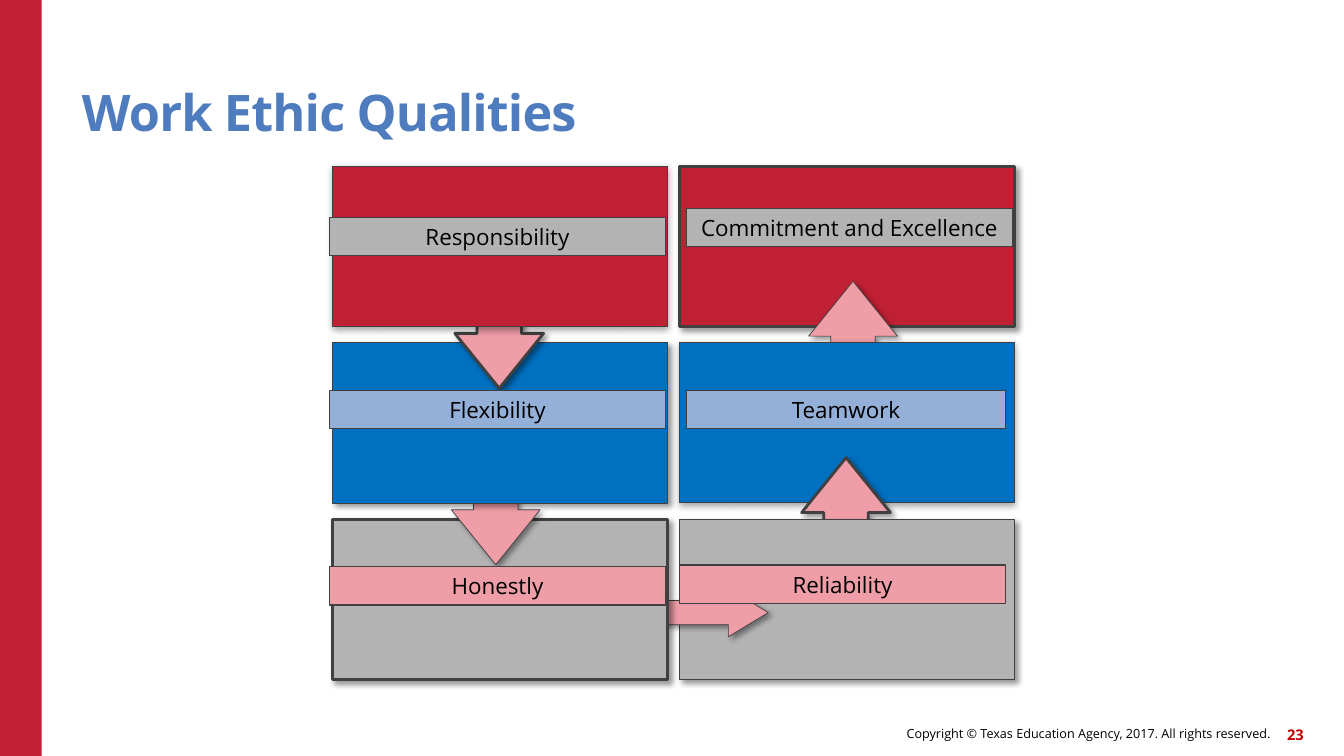
from dataclasses import dataclass
from lxml import etree
from pptx import Presentation, util as u
from pptx.dml.color import RGBColor
from pptx.enum import shapes, text
from pptx.oxml import ns


@dataclass(frozen=True)
class Theme:
    font: str = "Open Sans"
    red: str = "C02033"
    blue: str = "0070C0"
    gray: str = "B3B3B3"
    pink: str = "EF9DA7"
    sky: str = "95B0D8"
    edge: str = "404040"
    head: str = "4E7CBE"
    page: str = "C00000"
    ink: str = "000000"
    title: float = 36
    label: float = 16
    note: float = 9
    num: float = 10.5


T = Theme()
WIDE, HIGH = 13.33, 7.5
LEFT, TOP = 3.3, 1.65        # corner of the box grid
COL, ROW = 3.44, 1.75        # pitch of the grid
BOX = 3.32, 1.59
THIN, FINE, BOLD = 0.5, 0.75, 2
SOFT, DROP = (40, 4, 3, 45), (35, 5, 1.8, 90)
MID = text.MSO_ANCHOR.MIDDLE
RIGHT = text.PP_ALIGN.RIGHT

# Along the chain from its end: column, row, fill, line width, shadow
BOXES = [
    (1, 0, T.red, BOLD, SOFT),
    (1, 1, T.blue, FINE, DROP),
    (1, 2, T.gray, THIN, SOFT),
    (0, 2, T.gray, BOLD, SOFT),
    (0, 1, T.blue, THIN, SOFT),
    (0, 0, T.red, FINE, DROP),
]
# Arrow into each box but the first: centre column, centre row, turn, line
ARROWS = [
    (1.5, 0.84, 270, THIN),
    (1.48, 1.84, 270, BOLD),
    (1.08, 2.53, 0, THIN),
    (0.47, 2.07, 90, THIN),
    (0.48, 1.07, 90, BOLD),
]
# Column, row, width in columns, fill, wording
LABELS = [
    (-0.01, 2.27, 0.97, T.pink, "Honestly"),
    (-0.01, 1.27, 0.97, T.sky, "Flexibility"),
    (-0.01, 0.29, 0.97, T.gray, "Responsibility"),
    (1, 2.26, 0.94, T.pink, "Reliability"),
    (1.02, 1.27, 0.92, T.sky, "Teamwork"),
    (1.02, 0.24, 0.94, T.gray, "Commitment and Excellence"),
]


def put(obj, **vals):
    for key, val in vals.items():
        setattr(obj, key, val)


def share(x, y, w, h):
    """Turn percentages of the slide into lengths."""
    return [u.Inches(p * s / 100) for p, s in zip((x, y, w, h), (WIDE, HIGH) * 2)]


def cell(col, row, w, h):
    return [u.Inches(v) for v in (LEFT + col * COL, TOP + row * ROW, w, h)]


def shape(slide, kind, area, fill, line=None):
    item = slide.shapes.add_shape(kind, *area)
    item.shadow.inherit = False
    item.fill.solid()
    item.fill.fore_color.rgb = RGBColor.from_string(fill)
    if line:
        item.line.color.rgb = RGBColor.from_string(T.edge)
        item.line.width = u.Pt(line)
    else:
        item.line.fill.background()
    return item


def shade(item, alpha, blur, dist, turn):
    """Give a shape an outer shadow."""
    fx = item.element.spPr.find(ns.qn("a:effectLst"))
    out = etree.SubElement(
        fx, ns.qn("a:outerShdw"), blurRad=str(u.Pt(blur)), dist=str(u.Pt(dist)),
        dir=str(turn * 60000), algn="ctr", rotWithShape="0")
    tint = etree.SubElement(out, ns.qn("a:srgbClr"), val=T.ink)
    etree.SubElement(tint, ns.qn("a:alpha"), val=str(alpha * 1000))


def write(item, words, size, color=T.ink, bold=False,
          align=text.PP_ALIGN.CENTER, anchor=MID):
    frame = item.text_frame
    put(frame, word_wrap=True, auto_size=text.MSO_AUTO_SIZE.NONE,
        vertical_anchor=anchor, margin_left=0, margin_right=0,
        margin_top=0, margin_bottom=0)
    para = frame.paragraphs[0]
    para.alignment = align
    run = para.add_run()
    run.text = words
    put(run.font, name=T.font, size=u.Pt(size), bold=bold)
    run.font.color.rgb = RGBColor.from_string(color)
    return para


def title(slide, words):
    item = slide.shapes.title
    spot = share(6.1, 6, 82.5, 12.8)
    put(item, **dict(zip(("left", "top", "width", "height"), spot)))
    para = write(item, words, T.title, T.head, True,
                 text.PP_ALIGN.LEFT, text.MSO_ANCHOR.BOTTOM)
    para.line_spacing = 0.9
    para.runs[0].font._element.set("spc", "-60")


def note(slide, area, words, size, color=T.ink, bold=False):
    write(slide.shapes.add_textbox(*area), words, size, color, bold, RIGHT)


def box(slide, col, row, fill, line, cast):
    item = shape(slide, shapes.MSO_SHAPE.RECTANGLE, cell(col, row, *BOX), fill, line)
    shade(item, *cast)


def arrow(slide, col, row, turn, line):
    w, h = (0.66, 0.88) if turn else (1.21, 0.48)
    area = cell(col - w / 2 / COL, row - h / 2 / ROW, w, h)
    item = shape(slide, shapes.MSO_SHAPE.RIGHT_ARROW, area, T.pink, line)
    item.adjustments[0], item.adjustments[1] = 0.5, 0.825
    item.rotation = turn
    shade(item, *SOFT)


def label(slide, col, row, span, fill, words):
    area = cell(col, row, span * COL, 0.38)
    item = shape(slide, shapes.MSO_SHAPE.RECTANGLE, area, fill, FINE)
    write(item, words, T.label)


def main():
    deck = Presentation()
    put(deck, slide_width=u.Inches(WIDE), slide_height=u.Inches(HIGH))
    slide = deck.slides.add_slide(deck.slide_layouts[5])
    shape(slide, shapes.MSO_SHAPE.RECTANGLE, share(0, 0, 3.1, 100), T.red)
    note(slide, share(46.06, 94.93, 48.46, 4.27),
         "Copyright © Texas Education Agency, 2017. All rights reserved.", T.note)
    note(slide, share(93.85, 95.07, 3.15, 4.27), "23", T.num, T.page, True)
    title(slide, "Work Ethic Qualities")
    for i, spec in enumerate(BOXES):
        if i:
            arrow(slide, *ARROWS[i - 1])
        box(slide, *spec)
    for spec in LABELS:
        label(slide, *spec)
    deck.save("out.pptx")


if __name__ == "__main__":
    main()
